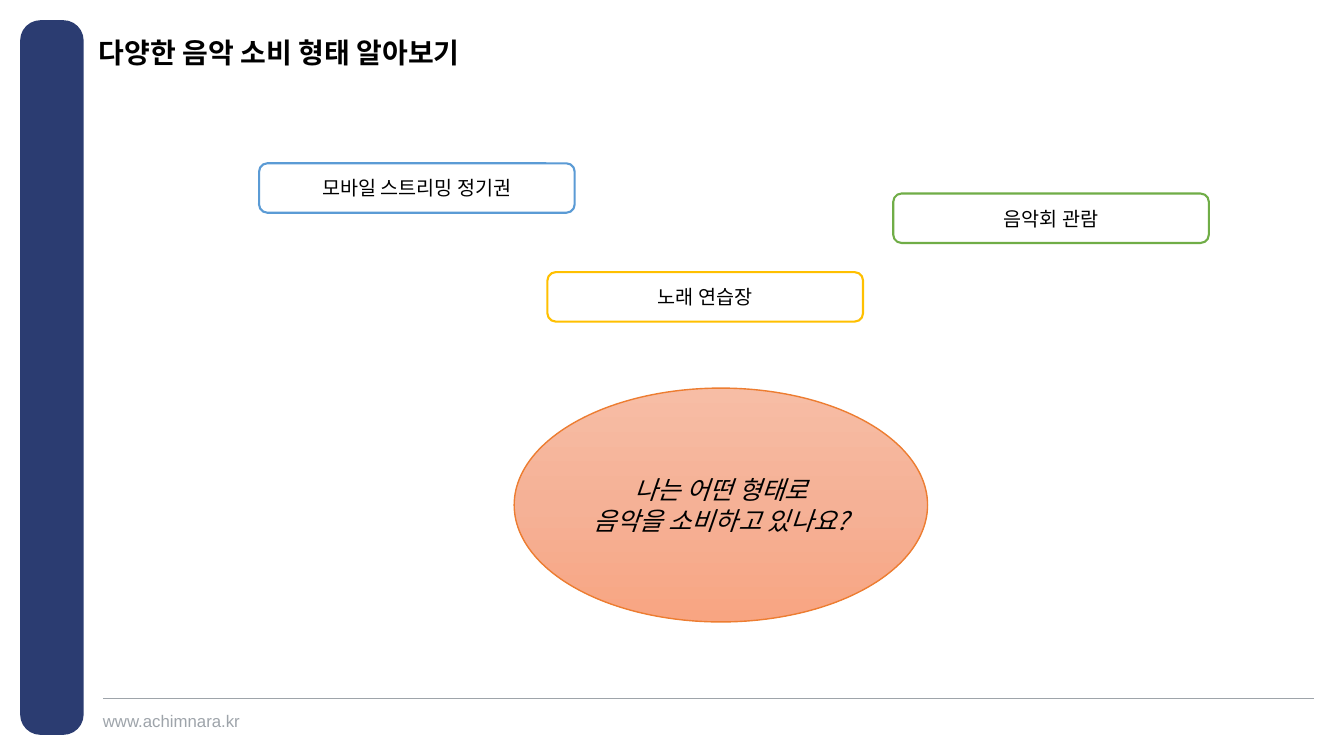
"""Build a slide on the different ways of consuming music."""
from copy import deepcopy

from pptx import Presentation
from pptx.dml.color import RGBColor
from pptx.enum.shapes import MSO_CONNECTOR as CONN, MSO_SHAPE as SHAPE
from pptx.enum.text import MSO_ANCHOR as ANCHOR, PP_ALIGN as ALIGN
from pptx.oxml.ns import qn
from pptx.util import Inches, Pt

KOREAN = "Noto Sans CJK KR"
TITLE = "다양한 음악 소비 형태 알아보기"
SITE = "www.achimnara.kr"
QUESTION = ["나는 어떤 형태로", "음악을 소비하고 있나요?"]
WAYS = [
    ("모바일 스트리밍 정기권", 2.57, 1.62, "5B9BD5"),
    ("음악회 관람", 8.86, 1.92, "70AD47"),
    ("노래 연습장", 5.43, 2.7, "FFC000"),
]
WAY_SIZE = (3.13, 0.49)
GRADIENT = [(0, "F7BDA5"), (0.5, "F5B196"), (1, "F8A582")]
NAVY, GREY = "2B3C71", "9EA4AA"


def rgb(color):
    return RGBColor.from_string(color)


def write(tf, lines, size, font=KOREAN, color="000000", bold=False,
          italic=False, align=ALIGN.CENTER, spacing=None):
    tf.word_wrap = True
    for i, text in enumerate(lines):
        p = tf.add_paragraph() if i else tf.paragraphs[0]
        p.alignment, p.line_spacing = align, spacing
        r = p.add_run()
        r.text = text
        f = r.font
        f.name, f.size, f.bold, f.italic = font, Pt(size), bold, italic
        f.color.rgb = rgb(color)
        ea = r._r.get_or_add_rPr().makeelement(qn("a:ea"), {"typeface": KOREAN})
        r._r.rPr.find(qn("a:latin")).addnext(ea)


def add_label(slide, box, text, size, **fmt):
    tf = slide.shapes.add_textbox(*map(Inches, box)).text_frame
    tf.margin_left = tf.margin_right = tf.margin_top = tf.margin_bottom = 0
    write(tf, [text], size, font="Arial", align=ALIGN.LEFT, **fmt)


def add_panel(slide, kind, box, fill, line=None, width=1):
    sp = slide.shapes.add_shape(kind, *map(Inches, box))
    sp.shadow.inherit = False
    sp.fill.solid()
    sp.fill.fore_color.rgb = rgb(fill)
    if line:
        sp.line.color.rgb = rgb(line)
        sp.line.width = Pt(width)
    else:
        sp.line.fill.background()
    sp.text_frame.vertical_anchor = ANCHOR.MIDDLE
    return sp


def shade(sp, stops):
    sp.fill.gradient()
    sp.fill.gradient_angle = 270
    first = sp._element.spPr.find(".//" + qn("a:gs"))
    first.addnext(deepcopy(first))
    for stop, (position, color) in zip(sp.fill.gradient_stops, stops):
        stop.position = position
        stop.color.rgb = rgb(color)


def main():
    prs = Presentation()
    prs.slide_width, prs.slide_height = Inches(13.33), Inches(7.5)
    slide = prs.slides.add_slide(prs.slide_layouts[6])

    bar = add_panel(slide, SHAPE.ROUNDED_RECTANGLE, (0.2, 0.2, 0.63, 7.09), NAVY)
    bar.adjustments[0] = 0.32
    rule = slide.shapes.add_connector(
        CONN.STRAIGHT, *map(Inches, (13.03, 6.93, 1.02, 6.93)))
    rule.line.color.rgb = rgb(GREY)
    rule.line.width = Pt(0.5)
    sp_pr = rule._element.spPr
    sp_pr.append(sp_pr.makeelement(qn("a:effectLst"), {}))

    add_label(slide, (1.02, 7.05, 1.5, 0.2), SITE, 12, color=GREY)
    add_label(slide, (0.98, 0.39, 7.87, 0.28), TITLE, 20, bold=True, spacing=0.9)

    for text, x, y, color in WAYS:
        sp = add_panel(slide, SHAPE.ROUNDED_RECTANGLE, (x, y, *WAY_SIZE),
                       "FFFFFF", color, 1.5)
        write(sp.text_frame, [text], 14)

    oval = add_panel(slide, SHAPE.OVAL, (5.1, 3.85, 4.1, 2.32),
                     GRADIENT[0][1], "ED7D31")
    shade(oval, GRADIENT)
    write(oval.text_frame, QUESTION, 18, italic=True)
    prs.save("out.pptx")


if __name__ == "__main__":
    main()
